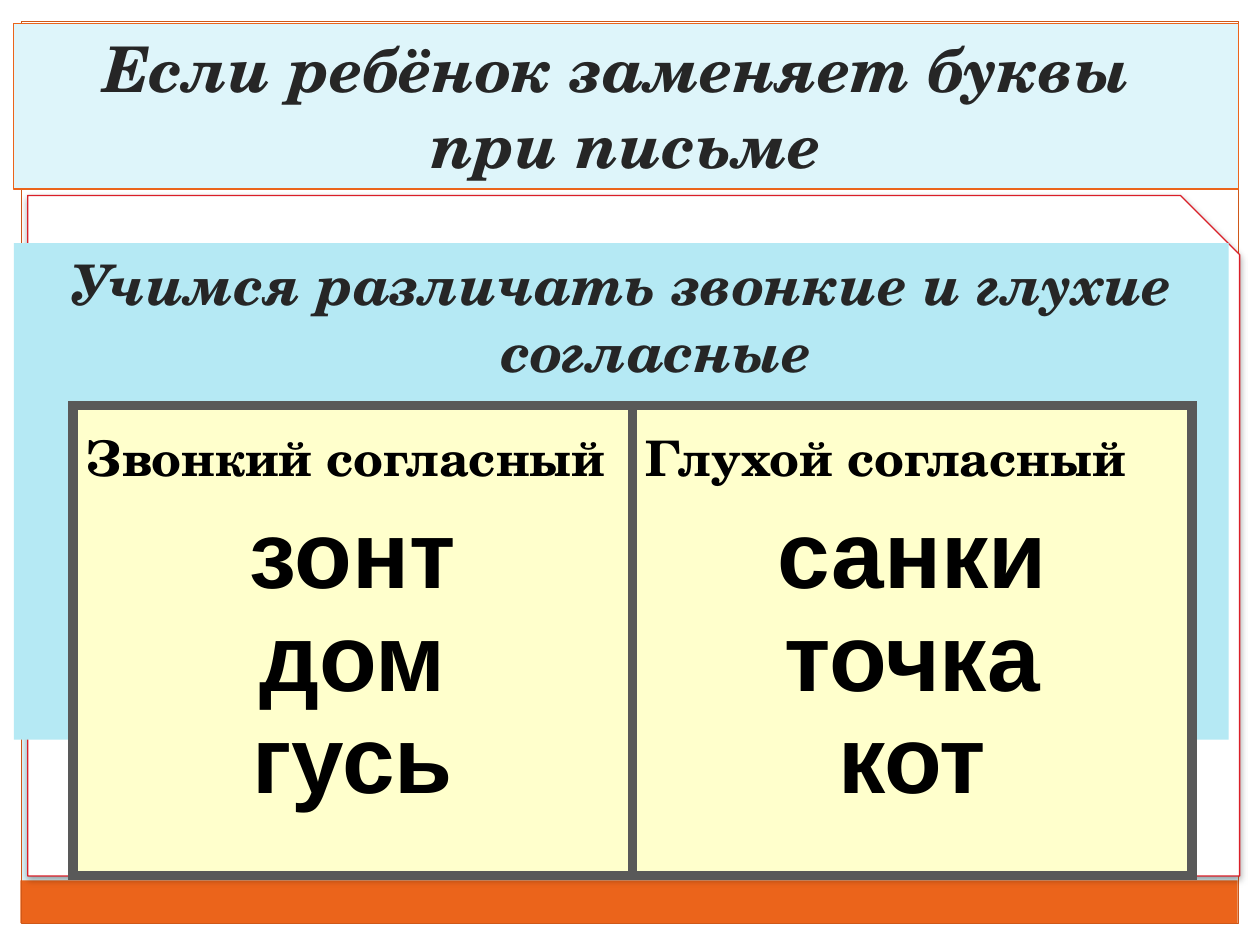
from dataclasses import dataclass
from lxml.etree import SubElement as Sub
from pptx import Presentation
from pptx.dml.color import RGBColor as RGB
from pptx.enum.shapes import MSO_SHAPE as Kind
from pptx.enum.text import MSO_ANCHOR as Anchor, PP_ALIGN as Align
from pptx.oxml.ns import qn
from pptx.util import Cm, Pt


@dataclass(frozen=True)
class Theme:
    pale: str = "DEF5FA"
    sky: str = "B5E9F4"
    white: str = "FFFFFF"
    cream: str = "FFFFCC"
    flame: str = "EB641B"
    rust: str = "CF5818"
    red: str = "DA1F28"
    gray: str = "595959"
    ink: str = "262626"
    black: str = "000000"
    serif: str = "TeX Gyre Schola"
    sans: str = "Arial"
    title: int = 36
    lead: int = 32
    head: int = 28
    word: int = 54
    thin: float = 0.75
    thick: int = 6


T = Theme()
WIDE, HIGH, EDGE = 25.4, 19.05, 0.43
TITLE = ["Если ребёнок заменяет буквы ", "при письме"]
LEAD = ["Учимся различать звонкие и глухие согласные"]
GROUPS = [
    ("Звонкий согласный", ["зонт", "дом", "гусь"]),
    ("Глухой согласный", ["санки", "точка", "кот"]),
]
MARGINS = [
    (0, HIGH - EDGE, WIDE, EDGE),
    (WIDE - EDGE, 0, EDGE, HIGH),
    (0, 0, EDGE, HIGH),
    (0, 0, WIDE, 6.99),
]
FOOTER = (0.41, 17.75, 24.54, 0.86)
FRAME = (EDGE, EDGE, WIDE - 2 * EDGE, HIGH - 2 * EDGE)
CARD = (0.56, 3.94, 24.43, 13.72)
PANEL = (0.28, 4.9, 24.49, 10.01)
BANNER = (0.28, 0.48, 24.69, 3.33)
GRID = (1.47, 8.18, 22.56, 9.47)


def add_box(slide, at, fill=None, line=None, kind=Kind.RECTANGLE):
    box = slide.shapes.add_shape(kind, *map(Cm, at))
    box.shadow.inherit = False
    if fill:
        box.fill.solid()
        box.fill.fore_color.rgb = RGB.from_string(fill)
    else:
        box.fill.background()
    if line:
        box.line.color.rgb = RGB.from_string(line)
        box.line.width = Pt(T.thin)
    else:
        box.line.fill.background()
    return box


def add_shade(box):
    glow = box.element.spPr.find(qn("a:effectLst"))
    shade = Sub(glow, qn("a:outerShdw"), blurRad=str(Pt(4)), dist=str(Pt(2)),
                dir="5400000", algn="ctr", rotWithShape="0")
    tone = Sub(shade, qn("a:srgbClr"), val=T.black)
    Sub(tone, qn("a:alpha"), val="35000")


def add_text(frame, lines, face, size, tint, slant=False, align=Align.CENTER, more=False):
    frame.word_wrap = True
    paras = []
    for i, line in enumerate(lines):
        para = frame.add_paragraph() if i or more else frame.paragraphs[0]
        para.alignment = align
        run = para.add_run()
        run.text = line
        font = run.font
        font.name, font.size = face, Pt(size)
        font.bold, font.italic = True, slant
        font.color.rgb = RGB.from_string(tint)
        paras.append(para)
    return paras


def add_edges(cell):
    props = cell._tc.get_or_add_tcPr()
    for i, side in enumerate(("lnL", "lnR", "lnT", "lnB")):
        edge = props.makeelement(qn("a:" + side), {"w": str(Pt(T.thick))})
        props.insert(i, edge)
        Sub(Sub(edge, qn("a:solidFill")), qn("a:srgbClr"), val=T.gray)


def add_grid(slide):
    table = slide.shapes.add_table(1, len(GROUPS), *map(Cm, GRID)).table
    table.first_row = table.horz_banding = False
    for cell, (head, words) in zip(table.rows[0].cells, GROUPS):
        cell.fill.solid()
        cell.fill.fore_color.rgb = RGB.from_string(T.cream)
        cell.margin_top = Cm(0.27)
        add_edges(cell)
        frame = cell.text_frame
        first, = add_text(frame, [head], T.serif, T.head, T.black, align=Align.LEFT)
        first.space_after = Pt(7)
        for para in add_text(frame, words, T.sans, T.word, T.black, more=True):
            para.line_spacing = 0.97


def main():
    """Build the slide on voiced and voiceless consonants."""
    deck = Presentation()
    deck.slide_width, deck.slide_height = Cm(WIDE), Cm(HIGH)
    slide = deck.slides.add_slide(deck.slide_layouts[6])
    back = slide.background.fill
    back.solid()
    back.fore_color.rgb = RGB.from_string(T.pale)

    for at in MARGINS:
        add_box(slide, at, T.white)
    add_box(slide, FOOTER, T.flame)
    add_box(slide, FRAME, line=T.rust)
    card = add_box(slide, CARD, T.white, T.red, Kind.SNIP_1_RECTANGLE)
    card.adjustments[0] = 0.087
    add_shade(card)

    panel = add_box(slide, PANEL, T.sky).text_frame
    panel.vertical_anchor = Anchor.TOP
    lead, = add_text(panel, LEAD, T.serif, T.lead, T.ink, slant=True)
    props = lead._p.get_or_add_pPr()
    props.set("marL", str(Cm(1.42)))
    props.set("indent", str(-Cm(1.42)))

    add_grid(slide)
    banner = add_box(slide, BANNER, T.pale, T.flame).text_frame
    banner.vertical_anchor = Anchor.TOP
    add_text(banner, TITLE, T.serif, T.title, T.ink, slant=True)
    deck.save("out.pptx")


if __name__ == "__main__":
    main()
